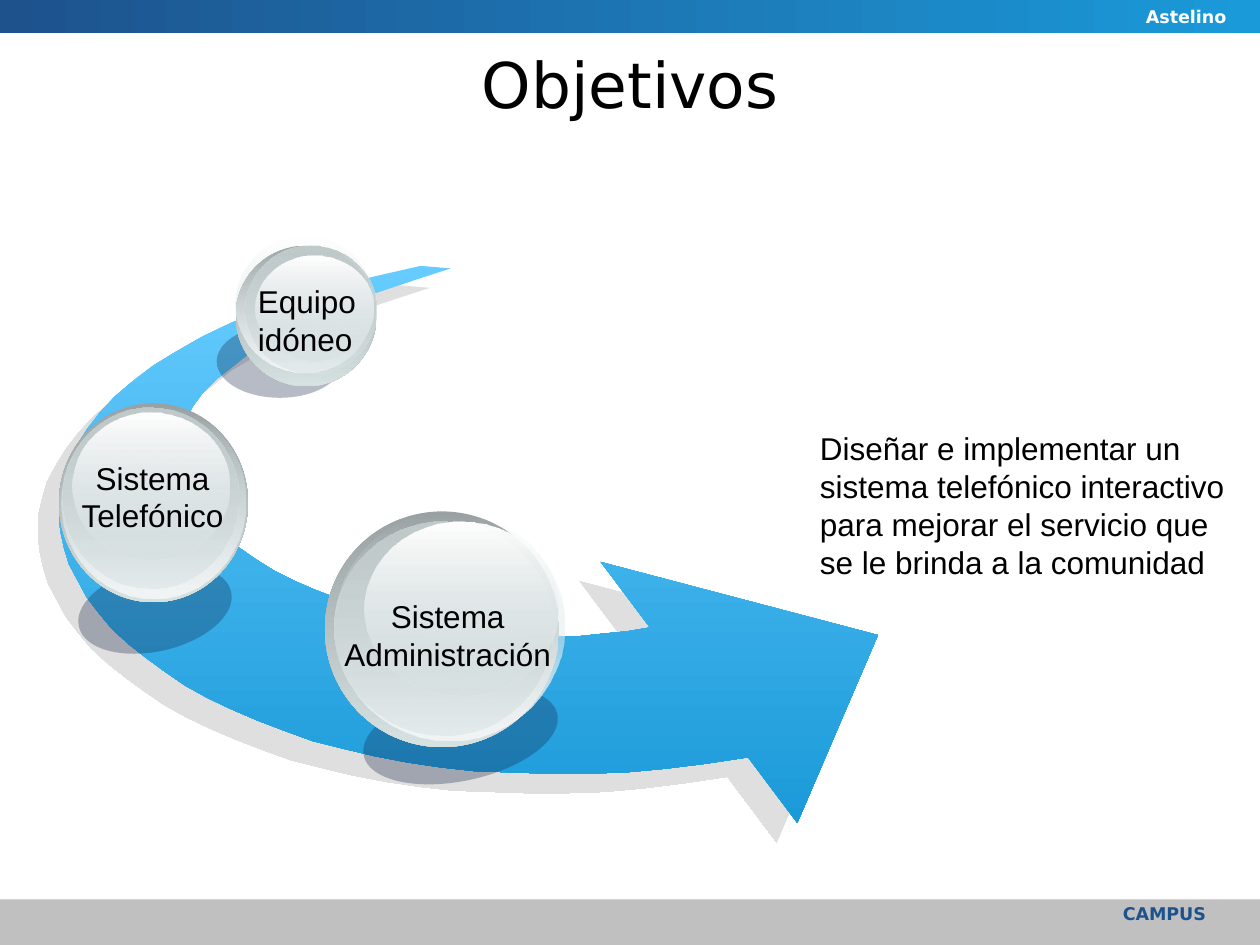
import pptx
import pptx.dml.color
import pptx.enum.shapes
import pptx.enum.text
import pptx.oxml
import pptx.oxml.ns
import pptx.util
from pptx.util import Cm

ALIGN = pptx.enum.text.PP_ALIGN
PRESET = pptx.enum.shapes.MSO_SHAPE
HEADING_FONT, BODY_FONT = "DejaVu Sans", "Arial"

COLORS = {
    "navy": "1D528D", "blue": "1B9AD9", "sky": "66CCFF", "silver": "C0C0C0",
    "steel": "99A1A2", "mist": "D6E1E2", "pearl": "F2F5F5", "ash": "C1CBCC",
    "shade": "0F2145", "white": "FFFFFF", "black": "000000",
}

# Glass layers from back to front: (top colour, opacity), (bottom colour, opacity)
GLASS = [
    (("steel", 100), ("mist", 100)),
    (("mist", 0), ("pearl", 100)),
    (("ash", 100), ("mist", 48)),
    (("white", 100), ("mist", 38)),
]

# Boxes are left, top, width, height in cm; the inner ones start from the ball's corner
BALLS = [
    {"text": "Sistema Administración", "align": ALIGN.CENTER, "corner": (6.55, 10.31),
     "shade": (0.74, 3.58, 3.99, 1.85), "tilt": -12.1, "label": (0, 1.6, 4.95, 1.8),
     "layers": [(0, 0, 4.72, 4.75), (0.2, 0, 4.62, 4.62),
                (0.2, 0.2, 4.39, 4.32), (0.79, 0.2, 3.91, 3.51)]},
    {"text": "Sistema Telefónico", "align": ALIGN.CENTER, "corner": (1.19, 8.13),
     "shade": (0.36, 3.3, 3.15, 1.7), "tilt": -12.9, "label": (-0.2, 0.99, 4.17, 1.8),
     "layers": [(0, 0, 3.81, 4.01), (0.05, 0.03, 3.71, 3.91),
                (0.08, 0.08, 3.53, 3.66), (0.28, 0.18, 3.15, 2.97)]},
    {"text": "Equipo idóneo", "align": ALIGN.LEFT, "corner": (4.75, 4.95),
     "shade": (-0.38, 1.6, 2.54, 1.47), "tilt": 0, "label": (0.2, 0.61, 2.97, 1.8),
     "layers": [(0, 0, 2.84, 2.84), (0, -0.2, 2.77, 2.77),
                (0.2, 0, 2.64, 2.59), (0.41, 0.2, 2.36, 2.11)]},
]

# Arrow outline on a grid 650 wide and 442 high
ARROW_OUTER = [
    (287, 0), (252, 8), (219, 16), (189, 25), (162, 35), (137, 45), (114, 56), (93, 68),
    (75, 79), (58, 92), (44, 104), (32, 117), (22, 130), (14, 143), (7, 156), (3, 170),
    (0, 183), (0, 197), (1, 210), (4, 224), (8, 237), (15, 250), (22, 263), (32, 276),
    (42, 288), (55, 300), (69, 311), (84, 322), (100, 333), (118, 343), (137, 352),
    (158, 361), (179, 369), (201, 377), (225, 383), (250, 389), (276, 394), (303, 398),
    (330, 401), (359, 402), (388, 403), (419, 403), (450, 402), (482, 399), (514, 395),
    (547, 390),
]
ARROW_HEAD = [(586, 442), (650, 293), (430, 235), (469, 287)]
ARROW_INNER = [
    (451, 290), (431, 292), (412, 294), (392, 294), (372, 293), (352, 292), (332, 290),
    (312, 287), (293, 284), (274, 280), (255, 275), (237, 269), (219, 263), (203, 257),
    (187, 250), (171, 242), (158, 234), (145, 225), (133, 217), (122, 207), (114, 198),
    (106, 188), (101, 177), (97, 167), (94, 156), (94, 146), (96, 135), (100, 124),
    (106, 112), (114, 101), (125, 90), (139, 79), (154, 67), (173, 56), (194, 45),
    (219, 34), (247, 23), (277, 13), (311, 2),
]


def rgb(name):
    return pptx.dml.color.RGBColor.from_string(COLORS[name])


def set_opacity(color_element, percent):
    alpha = pptx.oxml.parse_xml(
        f'<a:alpha {pptx.oxml.ns.nsdecls("a")} val="{percent * 1000}"/>')
    color_element.append(alpha)


def fill_solid(shape, color, opacity=100):
    shape.fill.solid()
    shape.fill.fore_color.rgb = rgb(color)
    if opacity < 100:
        set_opacity(shape.fill._xPr.find(".//" + pptx.oxml.ns.qn("a:srgbClr")), opacity)


def fill_gradient(shape, stops, angle):
    """Fill with two (colour, opacity) stops; the angle runs counter-clockwise."""
    shape.fill.gradient()
    shape.fill.gradient_angle = angle
    for stop, position, (color, opacity) in zip(shape.fill.gradient_stops, (0, 1), stops):
        stop.position = position
        stop.color.rgb = rgb(color)
        if opacity < 100:
            set_opacity(stop._gs.find(pptx.oxml.ns.qn("a:srgbClr")), opacity)


def add_plain(shapes, preset, left, top, width, height):
    shape = shapes.add_shape(preset, Cm(left), Cm(top), Cm(width), Cm(height))
    shape.shadow.inherit = False
    shape.line.fill.background()
    return shape


def format_text(frame, text, size, font, color="black", align=ALIGN.LEFT, bold=False):
    frame.word_wrap = True
    frame.text = text
    paragraph = frame.paragraphs[0]
    paragraph.alignment = align
    paragraph.font.size = pptx.util.Pt(size)
    paragraph.font.name = font
    paragraph.font.bold = bold
    paragraph.font.color.rgb = rgb(color)


def add_text(shapes, box, text, size, font, **style):
    frame = shapes.add_textbox(*map(Cm, box)).text_frame
    format_text(frame, text, size, font, **style)
    return frame


def add_header(slide, left, top, width, height):
    band = add_plain(slide.shapes, PRESET.RECTANGLE, left, top, width, height)
    fill_gradient(band, [("navy", 100), ("blue", 100)], 0)
    add_text(slide.shapes, (left + width - 6.35, top, 5.92, 0.64), "Astelino", 10,
             HEADING_FONT, color="white", align=ALIGN.RIGHT, bold=True)


def add_footer(slide, left, top, width, height):
    band = add_plain(slide.shapes, PRESET.RECTANGLE, left, top, width, height)
    fill_solid(band, "silver")
    add_text(slide.shapes, (left + width - 8.89, top - 0.05, 8.05, 0.81), "CAMPUS", 10,
             HEADING_FONT, color="navy", align=ALIGN.RIGHT, bold=True)


def set_title(slide, left, top, width, height):
    title = slide.shapes.title
    title.left, title.top, title.width, title.height = map(Cm, (left, top, width, height))
    title.text_frame.vertical_anchor = pptx.enum.text.MSO_ANCHOR.MIDDLE
    format_text(title.text_frame, "Objetivos", 36, HEADING_FONT, align=ALIGN.CENTER)


def add_arrow(slide, left, top, width):
    outline = ARROW_OUTER + ARROW_HEAD + ARROW_INNER
    builder = slide.shapes.build_freeform(*outline[0], scale=Cm(width) / 650)
    builder.add_line_segments(outline[1:], close=True)
    arrow = builder.convert_to_shape(Cm(left), Cm(top))
    arrow.line.fill.background()
    fill_gradient(arrow, [("sky", 100), ("blue", 100)], 270)
    arrow._element.spPr.append(pptx.oxml.parse_xml(
        f'<a:effectLst {pptx.oxml.ns.nsdecls("a")}>'
        f'<a:outerShdw dist="{pptx.util.Pt(16.3)}" dir="{137 * 60000}" algn="ctr" '
        f'rotWithShape="0"><a:srgbClr val="{COLORS["silver"]}"><a:alpha val="50000"/>'
        '</a:srgbClr></a:outerShdw></a:effectLst>'))


def add_ball(slide, ball):
    """Place a glass ball with its cast shade and label."""
    left, top = ball["corner"]

    def placed(box):
        return left + box[0], top + box[1], box[2], box[3]

    shapes = slide.shapes.add_group_shape().shapes
    shade = add_plain(shapes, PRESET.OVAL, *placed(ball["shade"]))
    shade.rotation = ball["tilt"]
    fill_solid(shade, "shade", 30)
    for box, stops in zip(ball["layers"], GLASS):
        fill_gradient(add_plain(shapes, PRESET.OVAL, *placed(box)), stops, 270)
    label = add_text(shapes, placed(ball["label"]), ball["text"], 18, BODY_FONT,
                     align=ball["align"])
    label.auto_size = pptx.enum.text.MSO_AUTO_SIZE.SHAPE_TO_FIT_TEXT


def main():
    deck = pptx.Presentation()
    deck.slide_width, deck.slide_height = Cm(25.4), Cm(19.05)
    slide = deck.slides.add_slide(deck.slide_layouts[5])
    add_footer(slide, 0, 18.13, 25.4, 0.92)
    add_header(slide, 0, 0, 25.4, 0.66)
    set_title(slide, 1.27, 0.89, 22.86, 1.57)
    add_arrow(slide, 1.19, 5.36, 16.51)
    goal = add_text(
        slide.shapes, (16.28, 8.53, 9.12, 3.33),
        "Diseñar e implementar un sistema telefónico interactivo para mejorar "
        "el servicio que se le brinda a la comunidad", 18, BODY_FONT)
    goal.auto_size = pptx.enum.text.MSO_AUTO_SIZE.SHAPE_TO_FIT_TEXT
    for ball in BALLS:
        add_ball(slide, ball)
    deck.save("out.pptx")


if __name__ == "__main__":
    main()
